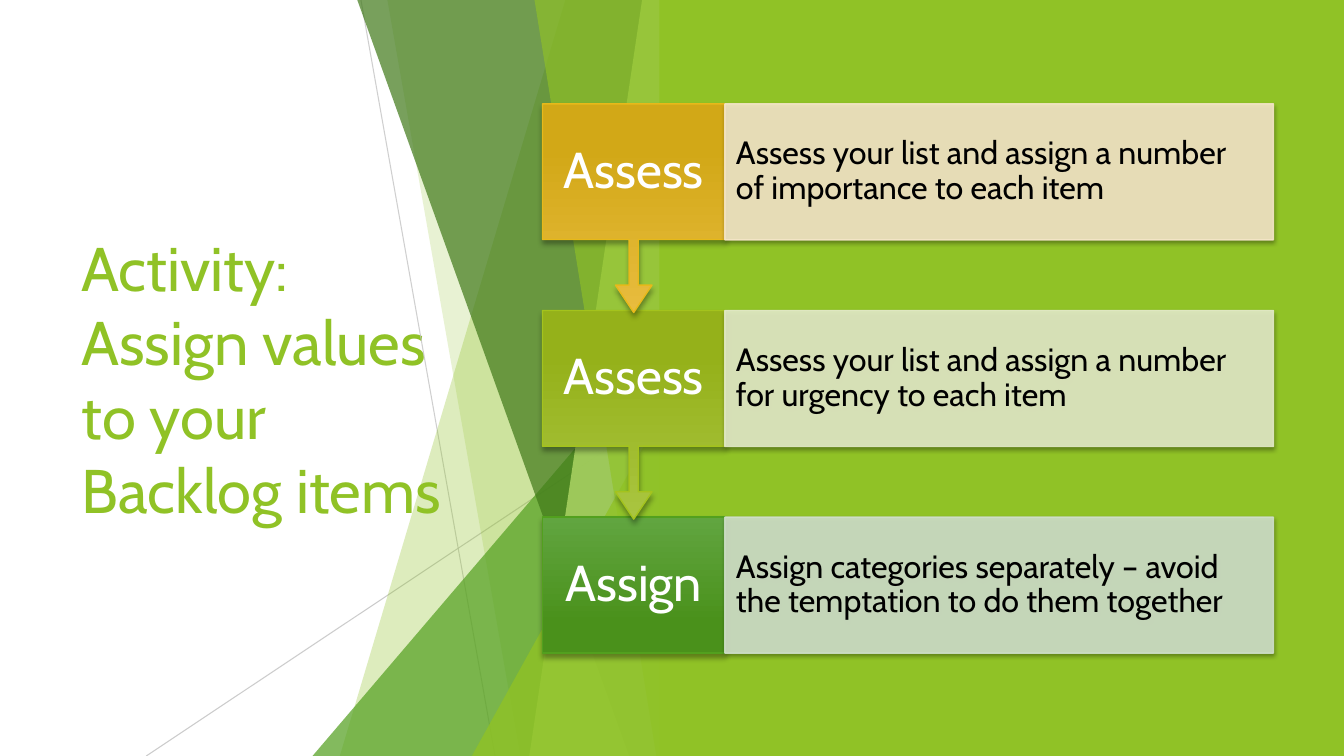
"""Builds the backlog activity slide: a title, faceted backdrop and three linked steps."""
from pptx import Presentation
from pptx import util as u
from pptx.dml.color import RGBColor
from pptx.enum import shapes, text
from pptx.oxml import parse_xml
from pptx.oxml.ns import nsdecls, qn
from lxml import etree

TITLE = "Activity: Assign values to your Backlog items"
FONT = "Cabin"
GREEN = RGBColor(0x90, 0xC2, 0x26)
MID_GREEN = RGBColor(0x54, 0xA0, 0x21)
DARK_GREEN = RGBColor(0x3F, 0x78, 0x18)
PALE_GREEN = RGBColor(0xBF, 0xE4, 0x71)
GRAY = RGBColor(0xBF, 0xBF, 0xBF)
WHITE = RGBColor(0xFF, 0xFF, 0xFF)
BLACK = RGBColor(0x00, 0x00, 0x00)

# label, description, gradient start, gradient end, outline, panel
STEPS = [
    ("Assess", "Assess your list and assign a number of importance to each item",
     RGBColor(0xE8, 0xBC, 0x3E), RGBColor(0xD2, 0xA8, 0x17),
     RGBColor(0xE7, 0xB9, 0x1A), RGBColor(0xF5, 0xE6, 0xC8)),
    ("Assess", "Assess your list and assign a number for urgency to each item",
     RGBColor(0xA9, 0xC5, 0x40), RGBColor(0x95, 0xB1, 0x1A),
     RGBColor(0xA4, 0xC3, 0x1D), RGBColor(0xE3, 0xEA, 0xC8)),
    ("Assign", "Assign categories separately – avoid the temptation to do them together",
     RGBColor(0x61, 0xA5, 0x40), RGBColor(0x4A, 0x91, 0x1B),
     RGBColor(0x52, 0xA0, 0x1E), RGBColor(0xCF, 0xDF, 0xCA)),
]
RAYS = [((3.58, 0), (4.91, 7.5), 75), ((6.66, 4.03), (1.45, 7.5), 80)]
FACETS = [
    ("strip", 5.61, 3.37, GREEN, 30),
    ("strip", 3.84, 5.16, GREEN, 20),
    ("wedge", 3.1, 3.33, MID_GREEN, 72),
    ("strip", 3.54, 6.24, DARK_GREEN, 70),
    ("strip", 6.37, 5.25, PALE_GREEN, 70),
    ("strip", 5.3, 6.51, GREEN, 65),
    ("wedge", 4.68, 3.93, GREEN, 80),
]
WIDTH, HEIGHT = 13.33, 7.5
FACET_RIGHT, FACET_TOP = 6.66, -0.01
PANEL_LEFT = 6.54
STEP_LEFT, STEP_TOP, STEP_PITCH = 5.38, 1.03, 2.05
LABEL_WIDTH, DETAIL_WIDTH = 1.81, 5.44
STEP_HEIGHT, CALLOUT_HEIGHT = 1.35, 2.07


def inches(*values):
    return [u.Inches(value) for value in values]


def set_alpha(fill, percent):
    color = fill._xPr.find(qn("a:solidFill"))[0]
    etree.SubElement(color, qn("a:alpha")).set("val", str(percent * 1000))


def paint(shape, color, percent=100):
    shape.shadow.inherit = False
    shape.fill.solid()
    shape.fill.fore_color.rgb = color
    if percent < 100:
        set_alpha(shape.fill, percent)
    shape.line.fill.background()


def outline(shape, color, percent=100):
    shape.line.width = u.Pt(1)
    shape.line.color.rgb = color
    if percent < 100:
        set_alpha(shape.line.fill, percent)


def drop_shadow(shape, blur, distance):
    properties = shape._element.spPr
    properties.remove(properties.find(qn("a:effectLst")))
    properties.append(parse_xml(
        f'<a:effectLst {nsdecls("a")}><a:outerShdw blurRad="{u.Pt(blur)}" dist="{u.Pt(distance)}" '
        'dir="5400000" rotWithShape="0"><a:srgbClr val="000000"><a:alpha val="35000"/>'
        '</a:srgbClr></a:outerShdw></a:effectLst>'))


def write(shape, words, size, color, insets, align=text.PP_ALIGN.LEFT, spacing=None):
    frame = shape.text_frame
    frame.word_wrap = True
    frame.vertical_anchor = text.MSO_ANCHOR.MIDDLE
    frame.margin_left = frame.margin_right = u.Inches(insets[0])
    frame.margin_top = frame.margin_bottom = u.Inches(insets[1])
    paragraph = frame.paragraphs[0]
    paragraph.alignment = align
    paragraph.line_spacing = spacing
    run = paragraph.add_run()
    run.text = words
    run.font.name = FONT
    run.font.size = u.Pt(size)
    run.font.color.rgb = color


def add_ray(slide, start, end, percent):
    ray = slide.shapes.add_connector(shapes.MSO_CONNECTOR.STRAIGHT, *inches(*start, *end))
    ray.line.width = u.Pt(0.75)
    ray.line.color.rgb = GRAY
    set_alpha(ray.line.fill, percent)
    etree.SubElement(ray._element.spPr, qn("a:effectLst"))


def add_facet(slide, kind, first, second, color, percent):
    if kind == "strip":
        corners = [(first, FACET_TOP), (FACET_RIGHT, FACET_TOP),
                   (FACET_RIGHT, HEIGHT), (second, HEIGHT)]
        points = [inches(*corner) for corner in corners]
        builder = slide.shapes.build_freeform(*points[0])
        builder.add_line_segments(points[1:], close=True)
        facet = builder.convert_to_shape()
    else:
        facet = slide.shapes.add_shape(
            shapes.MSO_SHAPE.ISOSCELES_TRIANGLE,
            *inches(first, second, FACET_RIGHT - first, HEIGHT - second))
        facet.adjustments[0] = 1
    paint(facet, color, percent)


def add_step(slide, index, label, detail, start, end, edge, panel):
    top = STEP_TOP + index * STEP_PITCH
    label_box = inches(STEP_LEFT, top, LABEL_WIDTH, STEP_HEIGHT)
    if index == len(STEPS) - 1:
        block = slide.shapes.add_shape(shapes.MSO_SHAPE.RECTANGLE, *label_box)
    else:
        block = slide.shapes.add_shape(
            shapes.MSO_SHAPE.UP_ARROW_CALLOUT,
            *inches(STEP_LEFT, top, LABEL_WIDTH, CALLOUT_HEIGHT))
        block.rotation = 180
        for position, value in enumerate((0.05, 0.1, 0.15, 0.65)):
            block.adjustments[position] = value
    block.shadow.inherit = False
    block.fill.gradient()
    block.fill.gradient_angle = 270
    for stop, color, position in zip(block.fill.gradient_stops, (start, end), (0, 0.78)):
        stop.color.rgb = color
        stop.position = position
    outline(block, edge)
    drop_shadow(block, 4, 3)
    write(slide.shapes.add_textbox(*label_box), label, 36, WHITE,
          (0.13, 0.28), text.PP_ALIGN.CENTER, 0.9)

    card = slide.shapes.add_shape(
        shapes.MSO_SHAPE.RECTANGLE,
        *inches(STEP_LEFT + LABEL_WIDTH, top, DETAIL_WIDTH, STEP_HEIGHT))
    paint(card, panel, 90)
    outline(card, panel, 90)
    drop_shadow(card, 3, 2)
    write(card, detail, 23, BLACK, (0.11, 0.32), spacing=0.9)


def main():
    presentation = Presentation()
    presentation.slide_width, presentation.slide_height = inches(WIDTH, HEIGHT)
    slide = presentation.slides.add_slide(presentation.slide_layouts[6])
    title = slide.shapes.add_textbox(*inches(0.71, 1.51, 3.88, 4.48))
    write(title, TITLE, 44, GREEN, (0.1, 0.05))
    for ray in RAYS:
        add_ray(slide, *ray)
    for facet in FACETS:
        add_facet(slide, *facet)
    backdrop = slide.shapes.add_shape(
        shapes.MSO_SHAPE.RECTANGLE, *inches(PANEL_LEFT, 0, WIDTH - PANEL_LEFT, HEIGHT))
    paint(backdrop, GREEN)
    for index, step in reversed(list(enumerate(STEPS))):
        add_step(slide, index, *step)
    presentation.save("out.pptx")


if __name__ == "__main__":
    main()
